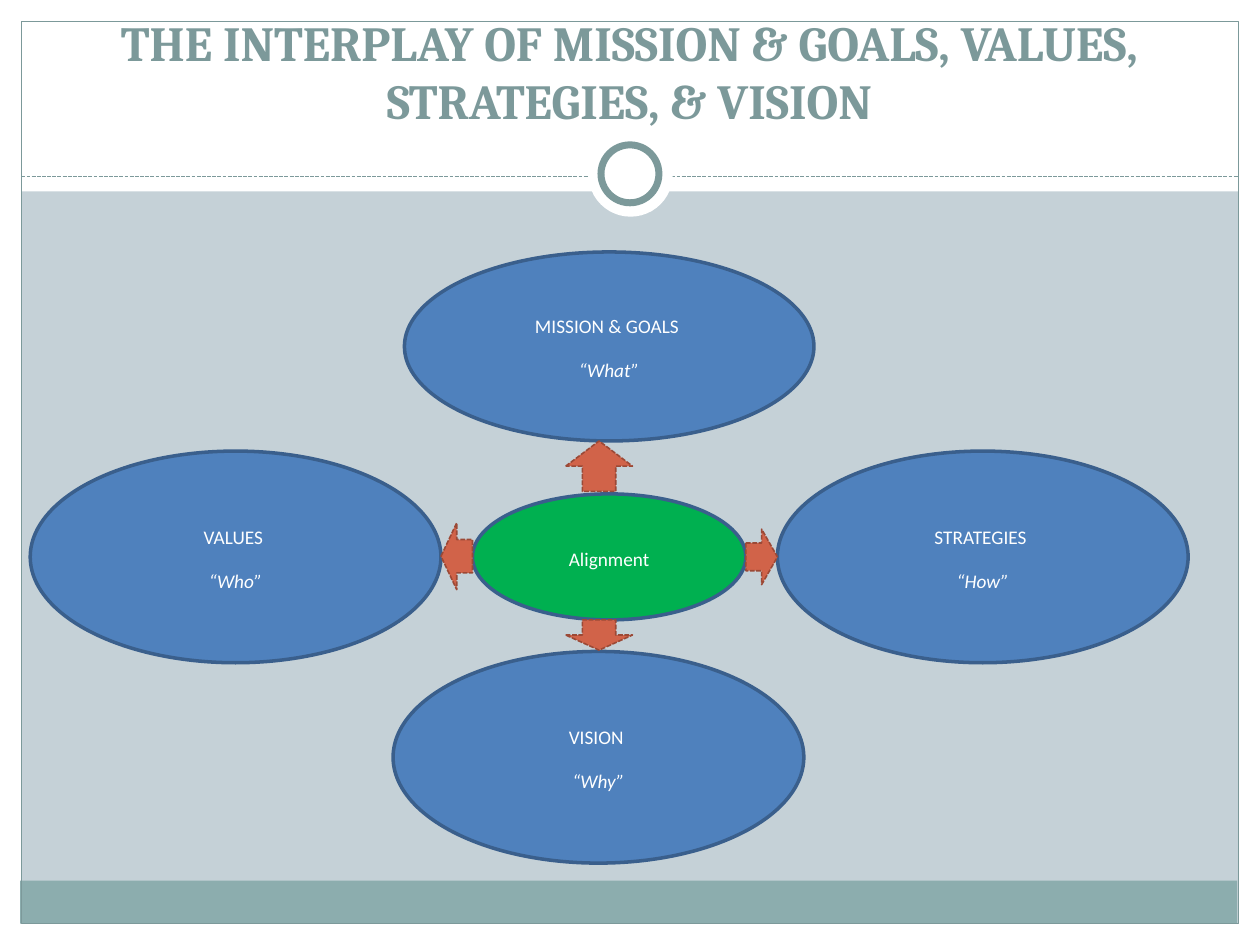
"""Build the slide on the interplay of mission, values, strategies and vision."""
from dataclasses import dataclass
from typing import NamedTuple, Optional

from lxml import etree
from pptx import Presentation
from pptx import util as u
from pptx.dml.color import RGBColor
from pptx.enum import dml, shapes, text
from pptx.oxml import ns

KIND = shapes.MSO_SHAPE


@dataclass(frozen=True)
class Theme:
    backdrop: str = "C5D1D7"
    white: str = "FFFFFF"
    footer: str = "8CADAE"
    frame: str = "7C999A"
    topic: str = "4F81BD"
    centre: str = "00B050"
    topic_line: str = "3A5F8C"
    arrow: str = "D16349"
    arrow_line: str = "9B4936"
    title_font: str = "Cambria"
    body_font: str = "Calibri"
    title_size: int = 28
    body_size: int = 11


class Box(NamedTuple):
    left: float
    top: float
    width: float
    height: float


class Outline(NamedTuple):
    color: str
    width: float
    dashed: bool = False


class Topic(NamedTuple):
    box: Box
    fill: str
    lines: tuple[str, ...]


class Arrow(NamedTuple):
    kind: KIND
    box: Box


THEME = Theme()
FRAME_LINE = Outline(THEME.frame, 0.75)
TOPIC_LINE = Outline(THEME.topic_line, 2)
ARROW_LINE = Outline(THEME.arrow_line, 0.9, True)

MARGINS = (
    Box(0, 7.33, 10, 0.17),
    Box(0, 0, 10, 1.52),
    Box(0, 0, 0.17, 7.5),
    Box(9.83, 0, 0.17, 7.5),
)
TOPICS = (
    Topic(Box(3.21, 2, 3.25, 1.5), THEME.topic, ("MISSION & GOALS ", "“What”")),
    Topic(Box(3.75, 3.92, 2.17, 1), THEME.centre, ("Alignment",)),
    Topic(Box(0.24, 3.58, 3.26, 1.68), THEME.topic, ("VALUES ", "“Who”")),
    Topic(Box(6.17, 3.58, 3.26, 1.68), THEME.topic, ("STRATEGIES ", "“How”")),
    Topic(Box(3.12, 5.17, 3.26, 1.68), THEME.topic, ("VISION ", "“Why”")),
)
ARROWS = (
    Arrow(KIND.UP_ARROW, Box(4.49, 3.5, 0.53, 0.4)),
    Arrow(KIND.DOWN_ARROW, Box(4.49, 4.92, 0.53, 0.24)),
    Arrow(KIND.LEFT_ARROW, Box(3.5, 4.15, 0.25, 0.53)),
    Arrow(KIND.RIGHT_ARROW, Box(5.92, 4.2, 0.25, 0.44)),
)


def rgb(color: str) -> RGBColor:
    """Turn a hex string into a colour."""
    return RGBColor.from_string(color)


def set_line(line, outline: Outline) -> None:
    """Apply an outline to a line format."""
    line.color.rgb = rgb(outline.color)
    line.width = u.Pt(outline.width)
    if outline.dashed:
        line.dash_style = dml.MSO_LINE.SQUARE_DOT


def add_shape(page, kind: KIND, box: Box, fill: Optional[str] = None,
              outline: Optional[Outline] = None):
    """Add a preset shape without a shadow."""
    shape = page.shapes.add_shape(kind, *map(u.Inches, box))
    shape.shadow.inherit = False
    if fill:
        shape.fill.solid()
        shape.fill.fore_color.rgb = rgb(fill)
    else:
        shape.fill.background()
    if outline:
        set_line(shape.line, outline)
    else:
        shape.line.fill.background()
    return shape


def format_para(para, font: str, size: int, color: str) -> None:
    """Centre a paragraph and set its font."""
    para.alignment = text.PP_ALIGN.CENTER
    for span in para.runs:
        span.font.name = font
        span.font.size = u.Pt(size)
        span.font.color.rgb = rgb(color)


def add_frame(page) -> None:
    """Draw the white margins, footer band, border, divider and ring."""
    for box in MARGINS:
        add_shape(page, KIND.RECTANGLE, box, THEME.white)
    add_shape(page, KIND.RECTANGLE, Box(0.16, 6.99, 9.66, 0.34), THEME.footer)
    add_shape(page, KIND.RECTANGLE, Box(0.17, 0.17, 9.66, 7.16), None, FRAME_LINE)
    divider = page.shapes.add_connector(
        shapes.MSO_CONNECTOR.STRAIGHT, *map(u.Inches, (0.17, 1.4, 9.83, 1.4)))
    set_line(divider.line, FRAME_LINE._replace(dashed=True))
    etree.SubElement(divider.element.spPr, ns.qn("a:effectLst"))
    add_shape(page, KIND.OVAL, Box(4.67, 1.05, 0.67, 0.67), THEME.white)
    add_shape(page, KIND.OVAL, Box(4.77, 1.15, 0.46, 0.46), THEME.white,
              Outline(THEME.frame, 4))


def add_title(page, wording: str) -> None:
    """Add the slide title."""
    box = page.shapes.add_textbox(*map(u.Inches, Box(0.33, 0.25, 9.33, 0.83)))
    frame = box.text_frame
    frame.word_wrap = True
    frame.vertical_anchor = text.MSO_ANCHOR.BOTTOM
    frame.text = wording
    para = frame.paragraphs[0]
    format_para(para, THEME.title_font, THEME.title_size, THEME.frame)
    para.runs[0].font.bold = True


def add_topic(page, topic: Topic) -> None:
    """Add an ellipse with its name and an optional italic question."""
    shape = add_shape(page, KIND.OVAL, topic.box, topic.fill, TOPIC_LINE)
    frame = shape.text_frame
    frame.word_wrap = True
    frame.vertical_anchor = text.MSO_ANCHOR.MIDDLE
    frame.text = "\n".join(topic.lines)
    for index, para in enumerate(frame.paragraphs):
        format_para(para, THEME.body_font, THEME.body_size, THEME.white)
        para.line_spacing = 1.15
        para.space_after = u.Pt(10)
        para.runs[0].font.italic = index > 0


def main() -> None:
    """Build and save the deck."""
    deck = Presentation()
    deck.slide_width, deck.slide_height = u.Inches(10), u.Inches(7.5)
    page = deck.slides.add_slide(deck.slide_layouts[6])
    page.background.fill.solid()
    page.background.fill.fore_color.rgb = rgb(THEME.backdrop)
    add_frame(page)
    add_title(page, "THE INTERPLAY OF MISSION & GOALS, VALUES, STRATEGIES, & VISION")
    for topic in TOPICS:
        add_topic(page, topic)
    for arrow in ARROWS:
        add_shape(page, arrow.kind, arrow.box, THEME.arrow, ARROW_LINE)
    deck.save("out.pptx")


if __name__ == "__main__":
    main()
